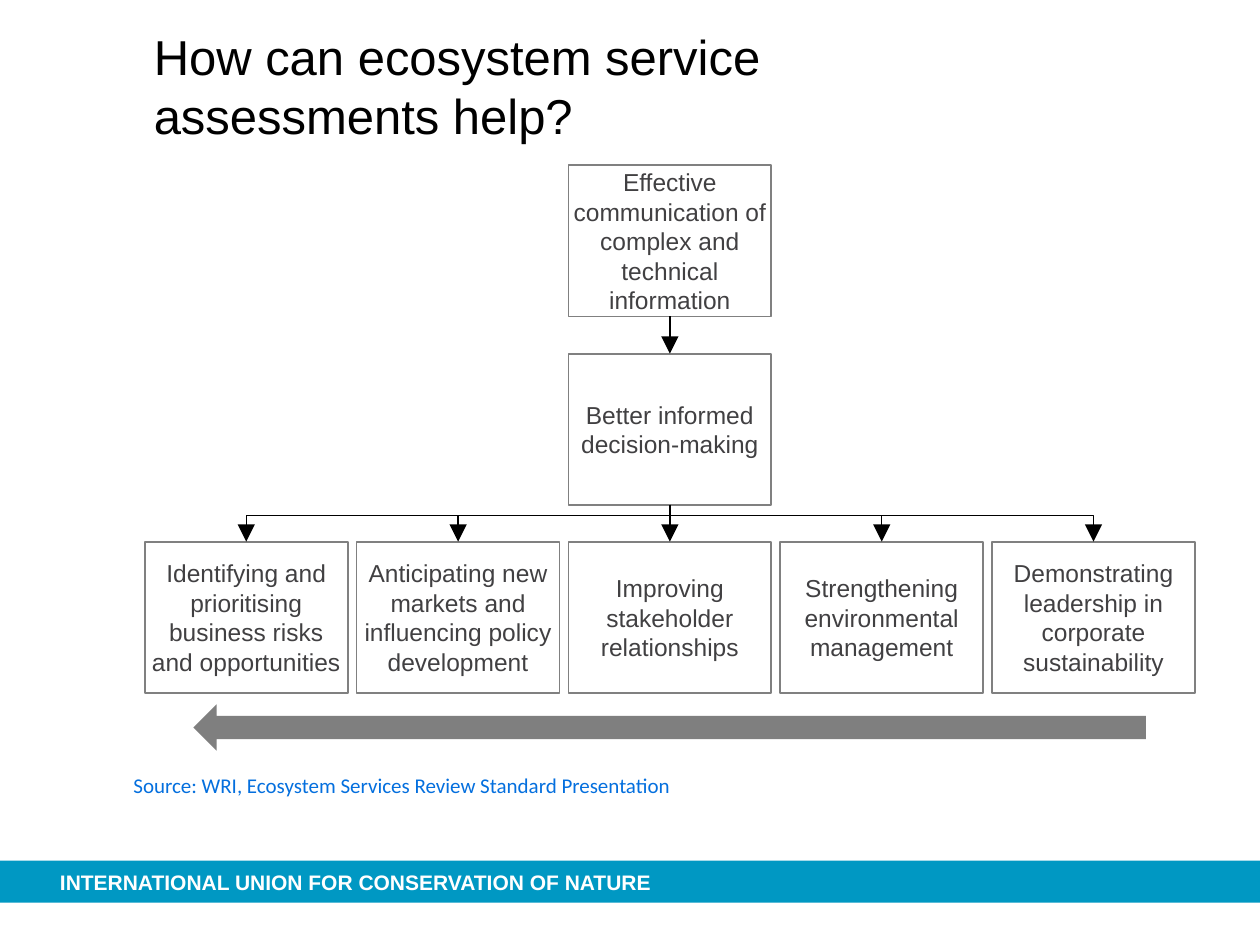
from dataclasses import dataclass

from lxml import etree
from pptx import Presentation
from pptx.dml.color import RGBColor
from pptx.enum import shapes, text
from pptx.oxml.ns import qn
from pptx.util import Cm, Pt

BLACK = RGBColor(0x00, 0x00, 0x00)
WHITE = RGBColor(0xFF, 0xFF, 0xFF)
BAR_BLUE = RGBColor(0x00, 0x98, 0xC3)
SOURCE_BLUE = RGBColor(0x04, 0x6F, 0xDE)
BOX_TEXT = RGBColor(0x41, 0x40, 0x42)
BOX_LINE = RGBColor(0x80, 0x80, 0x80)
ARROW_GREY = RGBColor(0x7F, 0x7F, 0x7F)

# Grid of boxes, in centimetres
BOX_W, BOX_H = 4.09, 3.05
GRID_LEFT, COL_PITCH = 2.92, 4.27
ROW_TOPS = (3.33, 7.13, 10.92)
MIDDLE = 2
TOP_SITE, BOTTOM_SITE = 0, 2
ELBOW_BEND = 29000  # share of the drop before the bend, in 1/100000


@dataclass
class Box:
    label: str
    row: int
    col: int = MIDDLE


MESSAGE = Box("Effective communication of complex and technical information", 0)
DECISION = Box("Better informed decision-making", 1)
BENEFITS = [Box(label, 2, col) for col, label in enumerate((
    "Identifying and prioritising business risks and opportunities",
    "Anticipating new markets and influencing policy development",
    "Improving stakeholder relationships",
    "Strengthening environmental management",
    "Demonstrating leadership in corporate sustainability",
))]


def set_text(s, content: str, font: str, size: float, color: RGBColor,
             inset: float = 0, bold: bool = False) -> None:
    tf = s.text_frame
    tf.word_wrap = True
    tf.margin_left = tf.margin_right = Cm(inset)
    tf.margin_top = tf.margin_bottom = Cm(inset)
    tf.text = content
    f = tf.paragraphs[0].runs[0].font
    f.name, f.size, f.bold = font, Pt(size), bold
    f.color.rgb = color


def add_filled(sl, kind, left: float, top: float, width: float, height: float,
               fill: RGBColor):
    s = sl.shapes.add_shape(kind, Cm(left), Cm(top), Cm(width), Cm(height))
    s.shadow.inherit = False
    s.fill.solid()
    s.fill.fore_color.rgb = fill
    s.line.fill.background()
    return s


def add_box(sl, box: Box):
    s = add_filled(sl, shapes.MSO_SHAPE.RECTANGLE, GRID_LEFT + box.col * COL_PITCH,
                   ROW_TOPS[box.row], BOX_W, BOX_H, WHITE)
    s.line.color.rgb = BOX_LINE
    s.line.width = Pt(1)
    set_text(s, box.label, "Arial", 14, BOX_TEXT, inset=0.1)
    s.text_frame.vertical_anchor = text.MSO_ANCHOR.MIDDLE
    s.text_frame.paragraphs[0].alignment = text.PP_ALIGN.CENTER
    return s


def add_arrow(sl, upper, lower) -> None:
    """Join the bottom of one box to the top of another, bending if needed."""
    x1, y1 = upper.left + upper.width // 2, upper.top + upper.height
    x2, y2 = lower.left + lower.width // 2, lower.top
    straight = upper.left == lower.left
    kind = shapes.MSO_CONNECTOR.STRAIGHT if straight else shapes.MSO_CONNECTOR.ELBOW
    c = sl.shapes.add_connector(kind, x1, y1, x2, y2)
    c.begin_connect(upper, BOTTOM_SITE)
    c.end_connect(lower, TOP_SITE)
    c.line.color.rgb = BLACK
    c.line.width = Pt(0.75)
    sp_pr = c._element.spPr
    if not straight:
        # An elbow leaves sideways, so turn its frame to make it leave downwards
        drop, run = y2 - y1, abs(x2 - x1)
        c.left, c.top = (x1 + x2 - drop) // 2, (y1 + y2 - run) // 2
        c.width, c.height = drop, run
        xfrm = sp_pr.find(qn("a:xfrm"))
        to_right = x2 > x1
        xfrm.set("rot", str((270 if to_right else 90) * 60000))
        xfrm.set("flipH", "1" if to_right else "0")
        xfrm.set("flipV", "0")
        guides = sp_pr.find(qn("a:prstGeom")).get_or_add_avLst()
        etree.SubElement(guides, qn("a:gd"), name="adj1", fmla=f"val {ELBOW_BEND}")
    etree.SubElement(sp_pr.find(qn("a:ln")), qn("a:tailEnd"),
                     type="triangle", w="lg", len="lg")
    etree.SubElement(sp_pr, qn("a:effectLst"))


def add_label(sl, left: float, top: float, width: float, content: str,
              font: str, color: RGBColor, bold: bool = False) -> None:
    s = sl.shapes.add_textbox(Cm(left), Cm(top), Cm(width), Cm(0.51))
    set_text(s, content, font, 12, color, bold=bold)


def main() -> None:
    prs = Presentation()
    prs.slide_width, prs.slide_height = Cm(25.4), Cm(19.05)
    sl = prs.slides.add_slide(prs.slide_layouts[5])

    # Title
    title = sl.shapes.title
    title.left, title.top = Cm(3.1), Cm(0.53)
    title.width, title.height = Cm(18.21), Cm(2.21)
    set_text(title, "How can ecosystem service assessments help?", "Arial", 28, BLACK)
    title.text_frame.auto_size = text.MSO_AUTO_SIZE.NONE
    title.text_frame.vertical_anchor = text.MSO_ANCHOR.TOP
    title.text_frame.paragraphs[0].alignment = text.PP_ALIGN.LEFT

    # Footer bar
    add_filled(sl, shapes.MSO_SHAPE.RECTANGLE, 0, 17.35, 25.4, 0.85, BAR_BLUE)
    add_label(sl, 1.21, 17.53, 14.2, "INTERNATIONAL UNION FOR CONSERVATION OF NATURE",
              "Arial", WHITE, bold=True)

    # Boxes and the arrows between them
    message, decision = add_box(sl, MESSAGE), add_box(sl, DECISION)
    benefits = [add_box(sl, box) for box in BENEFITS]
    add_arrow(sl, message, decision)
    for benefit in benefits:
        add_arrow(sl, decision, benefit)

    # Wide arrow pointing left
    wide = add_filled(sl, shapes.MSO_SHAPE.RIGHT_ARROW, 3.9, 14.2, 19.2, 0.93, ARROW_GREY)
    wide.rotation = 180

    # Source
    add_label(sl, 2.69, 15.57, 21.41,
              "Source: WRI, Ecosystem Services Review Standard Presentation",
              "Calibri", SOURCE_BLUE)

    prs.save("out.pptx")


if __name__ == "__main__":
    main()
